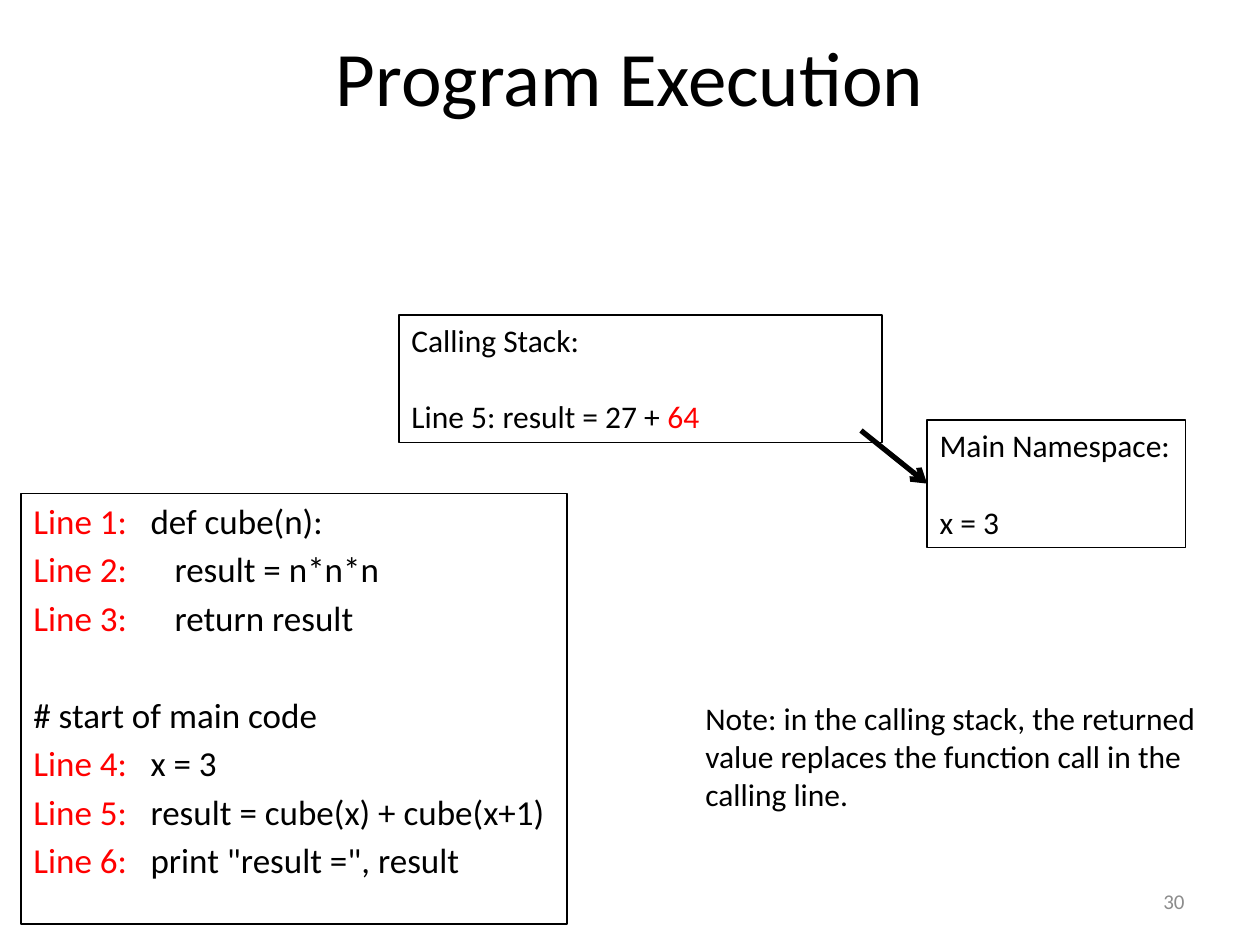
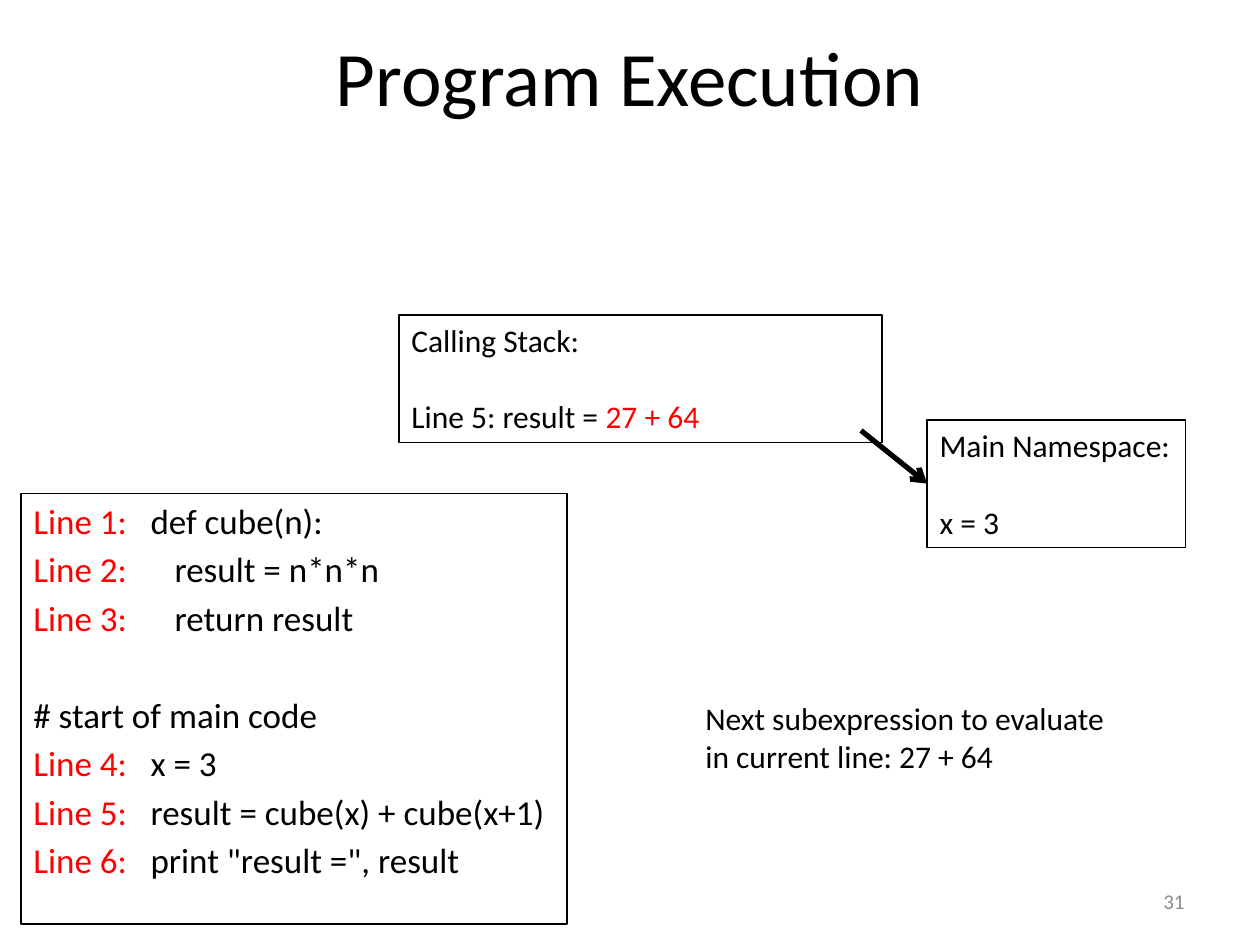
from lxml import etree
from pptx import Presentation
from pptx.dml.color import RGBColor
from pptx.enum.shapes import MSO_CONNECTOR, MSO_SHAPE
from pptx.enum.text import MSO_ANCHOR, MSO_AUTO_SIZE, PP_ALIGN
from pptx.oxml.ns import qn
from pptx.util import Inches, Pt

RECTANGLE = MSO_SHAPE.RECTANGLE
STRAIGHT = MSO_CONNECTOR.STRAIGHT
TOP, MIDDLE = MSO_ANCHOR.TOP, MSO_ANCHOR.MIDDLE
GROW, FIXED = MSO_AUTO_SIZE.SHAPE_TO_FIT_TEXT, MSO_AUTO_SIZE.NONE
LEFT, CENTER, RIGHT = PP_ALIGN.LEFT, PP_ALIGN.CENTER, PP_ALIGN.RIGHT
LEFT_SIDE = 1

# Shared style; the slide is a grid of 120 columns and 90 rows
COLUMNS, ROWS = 120, 90
CELL = Inches(10) / COLUMNS
FONT = "Calibri"
BLACK, RED, GRAY = "000000", "FF0000", "8C8C8C"
SECTION_GAP = 22            # one empty line of 18 point text
CODE_GAP, MAIN_GAP = 3.6, 31.6
CODE_TAB, INNER_TAB = 0.93, 1.12

# Each code line: label, tab stop in inches, code
CODE = [
    ("Line 1:", CODE_TAB, "def cube(n):"),
    ("Line 2:", INNER_TAB, "result = n*n*n"),
    ("Line 3:", INNER_TAB, "return result"),
    (None, None, "# start of main code"),
    ("Line 4:", CODE_TAB, "x = 3"),
    ("Line 5:", CODE_TAB, "result = cube(x) + cube(x+1)"),
    ("Line 6:", CODE_TAB, 'print "result =", result'),
]

# What differs from slide to slide
STEPS = [
    {"number": 30, "evaluated": "Line 5: result = 27 + ", "current": "64",
     "note": ["Note: in the calling stack, the returned",
              "value replaces the function call in the",
              "calling line."],
     "note_place": (66, 66, 50.4, 12.12)},
    {"number": 31, "evaluated": "Line 5: result = ", "current": "27 + 64",
     "note": ["Next subexpression to evaluate",
              "in current line: 27 + 64"],
     "note_place": (66, 66, 40.8, 8.52)},
]


def color(value):
    return RGBColor.from_string(value)


def cells(*counts):
    return [round(count * CELL) for count in counts]


def apply(target, values):
    for name, value in values.items():
        setattr(target, name, value)


def add_span(para, text, size, tone=BLACK):
    span = para.add_run()
    span.text = text
    apply(span.font, {"name": FONT, "size": Pt(size)})
    span.font.color.rgb = color(tone)


def next_para(frame, gap=0, align=LEFT):
    """Use the empty first paragraph, then add further ones."""
    first = frame.paragraphs[0]
    para = frame.add_paragraph() if first.runs else first
    apply(para, {"alignment": align, "space_before": Pt(gap)})
    return para


def set_frame(box, anchor=TOP, fit=GROW):
    frame = box.text_frame
    apply(frame, {"word_wrap": True, "vertical_anchor": anchor, "auto_size": fit})
    return frame


def add_tab_stop(para, inches):
    stops = etree.SubElement(para._p.get_or_add_pPr(), qn("a:tabLst"))
    etree.SubElement(stops, qn("a:tab"), pos=str(Inches(inches)), algn="l")


def add_title(page, text):
    title = page.shapes.title
    apply(title, dict(zip(("left", "top", "width", "height"),
                          cells(6, 2, 108, 10.5))))
    frame = set_frame(title, MIDDLE, FIXED)
    add_span(next_para(frame, align=CENTER), text, 44)


def add_outlined_box(page, place, fit=GROW):
    box = page.shapes.add_shape(RECTANGLE, *cells(*place))
    box.shadow.inherit = False
    box.fill.background()
    box.line.color.rgb = color(BLACK)
    box.line.width = Pt(0.75)
    return box, set_frame(box, fit=fit)


def add_code(page):
    _, frame = add_outlined_box(page, (2, 47, 52, 41), FIXED)
    for label, stop, code in CODE:
        para = next_para(frame, CODE_GAP if label else MAIN_GAP)
        if label:
            add_tab_stop(para, stop)
            add_span(para, label, 20, RED)
            code = "\t" + code
        add_span(para, code, 20)


def add_state_box(page, place, heading, spans):
    """Outlined box with a heading and one line of coloured spans."""
    box, frame = add_outlined_box(page, place)
    add_span(next_para(frame), heading, 18)
    para = next_para(frame, SECTION_GAP)
    for text, tone in spans:
        add_span(para, text, 18, tone)
    return box


def add_arrow(page, start, target):
    x, y = cells(*start)
    arrow = page.shapes.add_connector(STRAIGHT, x, y, x, y)
    arrow.end_connect(target, LEFT_SIDE)
    arrow.line.color.rgb = color(BLACK)
    arrow.line.width = Pt(3)
    etree.SubElement(arrow.line._get_or_add_ln(), qn("a:tailEnd"), type="arrow")
    etree.SubElement(arrow._element.spPr, qn("a:effectLst"))


def add_text(page, place, lines, size=18, tone=BLACK, align=LEFT,
             anchor=TOP, fit=GROW):
    box = page.shapes.add_textbox(*cells(*place))
    frame = set_frame(box, anchor, fit)
    for line in lines:
        add_span(next_para(frame, align=align), line, size, tone)


def add_step(deck, step):
    page = deck.slides.add_slide(deck.slide_layouts.get_by_name("Title Only"))
    add_title(page, "Program Execution")
    add_code(page)
    # Page number
    add_text(page, (86, 83.4, 28, 4.8), [str(step["number"])], 12, GRAY,
             RIGHT, MIDDLE, FIXED)
    # Calling stack and the namespace it points to
    namespace = add_state_box(page, (88.3, 40, 24.6, 12.12),
                              "Main Namespace:", [("x = 3", BLACK)])
    add_state_box(page, (38, 30, 46, 12.12), "Calling Stack:",
                  [(step["evaluated"], BLACK), (step["current"], RED)])
    add_arrow(page, (82, 41), namespace)
    # Explanation
    add_text(page, step["note_place"], step["note"])


def main():
    deck = Presentation()
    deck.slide_width, deck.slide_height = cells(COLUMNS, ROWS)
    for step in STEPS:
        add_step(deck, step)
    deck.save("out.pptx")


if __name__ == "__main__":
    main()
